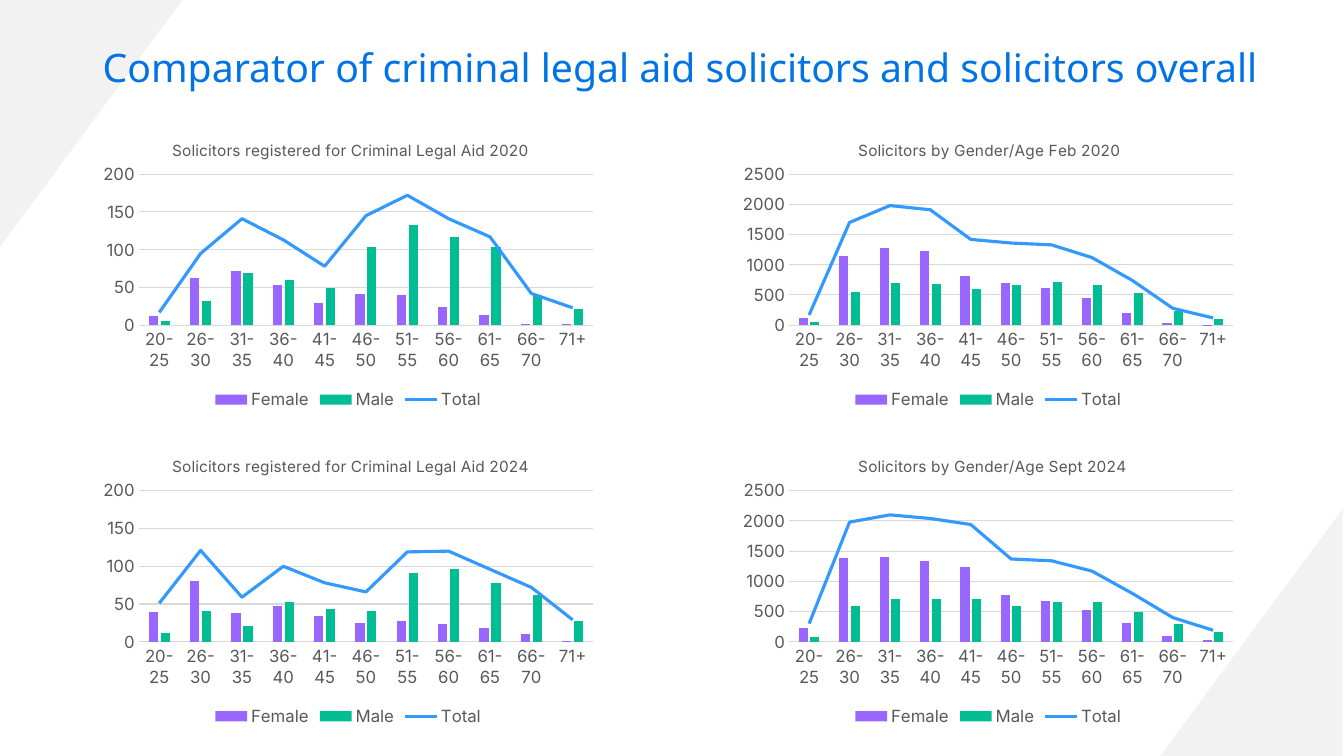
from pptx import Presentation, util as u
from pptx.chart import data as chart_data
from pptx.dml import color as dml
from pptx.enum import chart as ch, shapes, text
from pptx.oxml import ns, parse_xml

AGES = ["20-25", "26-30", "31-35", "36-40", "41-45", "46-50",
        "51-55", "56-60", "61-65", "66-70", "71+"]
FEMALE, MALE, TOTAL = "9966FF", "00BD94", "3399FF"
GREY, RULE, CORNER, BLUE = "595959", "D9D9D9", "F2F2F2", "0073E5"
COLUMNS, ROWS = (66.2, 523.4), (84.2, 310.3)
PANEL_WIDTH, PANEL_HEIGHT = 365, 211.7

LEGAL_AID = dict(top_value=200, step=50, title_x=0.15, plot_x=0.09, plot_w=0.89)
OVERALL = dict(top_value=2500, step=500, title_x=0.24, plot_x=0.11, plot_w=0.87)
PANELS = [
    (0, 0, "Solicitors registered for Criminal Legal Aid 2020", LEGAL_AID,
     [12, 63, 72, 53, 29, 41, 40, 24, 14, 2, 1],
     [5, 32, 69, 60, 49, 104, 132, 117, 103, 40, 22],
     [17, 95, 141, 113, 78, 145, 172, 141, 117, 42, 23]),
    (0, 1, "Solicitors registered for Criminal Legal Aid 2024", LEGAL_AID,
     [39, 80, 38, 47, 34, 25, 28, 23, 18, 10, 1],
     [12, 41, 21, 53, 44, 41, 91, 97, 78, 62, 28],
     [51, 121, 59, 100, 78, 66, 119, 120, 96, 72, 29]),
    (1, 0, "Solicitors by Gender/Age Feb 2020", OVERALL,
     [120, 1140, 1280, 1230, 810, 690, 610, 450, 210, 40, 10],
     [50, 550, 690, 680, 600, 670, 720, 670, 530, 240, 110],
     [170, 1700, 1980, 1910, 1420, 1360, 1330, 1120, 740, 280, 120]),
    (1, 1, "Solicitors by Gender/Age Sept 2024", OVERALL,
     [220, 1380, 1400, 1340, 1240, 780, 680, 520, 310, 90, 30],
     [80, 590, 700, 700, 700, 600, 650, 650, 500, 300, 160],
     [300, 1980, 2100, 2040, 1940, 1370, 1340, 1170, 800, 400, 190]),
]


def color(value):
    return dml.RGBColor.from_string(value)


def style_font(font, size, ink, name="Inter"):
    font.size, font.name, font.bold = u.Pt(size), name, False
    font.color.rgb = color(ink)


def write(frame, content, size, ink, name="Inter", align=None, spacing=None):
    frame.text = content
    paragraph = frame.paragraphs[0]
    paragraph.alignment = align
    paragraph.line_spacing = spacing
    style_font(paragraph.runs[0].font, size, ink, name)


def draw_line(line, ink, width):
    line.color.rgb = color(ink)
    line.width = u.Pt(width)


def add_corner(slide, left, top, turn):
    corner = slide.shapes.add_shape(shapes.MSO_SHAPE.RIGHT_TRIANGLE, u.Pt(left),
                                    u.Pt(top), u.Pt(176.4), u.Pt(130.3))
    corner.rotation = turn
    corner.shadow.inherit = False
    corner.fill.solid()
    corner.fill.fore_color.rgb = color(CORNER)
    corner.line.fill.background()
    slide.shapes._spTree.insert(2, corner._element)


def add_heading(slide, left, top, width, height):
    heading = slide.shapes.title
    heading.left, heading.top = u.Pt(left), u.Pt(top)
    heading.width, heading.height = u.Pt(width), u.Pt(height)
    frame = heading.text_frame
    frame.word_wrap = True
    frame.vertical_anchor = text.MSO_ANCHOR.MIDDLE
    write(frame, "Comparator of criminal legal aid solicitors and solicitors overall",
          28, BLUE, name="Noto Sans", align=text.PP_ALIGN.LEFT, spacing=0.9)


def set_layout(parent, index, target="", **place):
    for old in parent.findall(ns.qn("c:layout")):
        parent.remove(old)
    values = "".join(f'<c:{key} val="{value}"/>' for key, value in place.items())
    parent.insert(index, parse_xml(
        f'<c:layout {ns.nsdecls("c")}><c:manualLayout>{target}'
        f'<c:xMode val="edge"/><c:yMode val="edge"/>{values}'
        '</c:manualLayout></c:layout>'))


def move_total_to_line(chart):
    bars = chart.plots[0]._element
    total = bars.findall(ns.qn("c:ser"))[-1]
    for bar_only in total.findall(ns.qn("c:invertIfNegative")):
        total.remove(bar_only)
    axes = "".join(f'<c:axId val="{axis.get("val")}"/>'
                   for axis in bars.findall(ns.qn("c:axId")))
    line_plot = parse_xml(
        f'<c:lineChart {ns.nsdecls("c")}><c:grouping val="standard"/>'
        f'<c:varyColors val="0"/><c:marker val="1"/>{axes}</c:lineChart>')
    line_plot.insert(2, total)
    bars.addnext(line_plot)
    series = chart.plots[1].series[0]
    series.smooth = False
    series.marker.style = ch.XL_MARKER_STYLE.NONE
    draw_line(series.format.line, TOTAL, 2.25)


def add_panel(slide, left, top, width, height, title, female, male, total,
              top_value, step, title_x, plot_x, plot_w):
    counts_by_age = chart_data.CategoryChartData()
    counts_by_age.categories = AGES
    for name, values in (("Female", female), ("Male", male), ("Total", total)):
        counts_by_age.add_series(name, values)
    chart = slide.shapes.add_chart(ch.XL_CHART_TYPE.COLUMN_CLUSTERED, u.Pt(left), u.Pt(top),
                                   u.Pt(width), u.Pt(height), counts_by_age).chart
    style_font(chart.font, 10, "000000")

    write(chart.chart_title.text_frame, title, 11, GREY)
    set_layout(chart.chart_title._element, 1, x=title_x, y=0.06)

    bars = chart.plots[0]
    bars.gap_width, bars.overlap, bars.vary_by_categories = 219, -27, False
    for series, ink in zip(bars.series, (FEMALE, MALE)):
        series.format.fill.solid()
        series.format.fill.fore_color.rgb = color(ink)
        series.invert_if_negative = False
    move_total_to_line(chart)

    ages, counts = chart.category_axis, chart.value_axis
    for axis in (ages, counts):
        axis.major_tick_mark = axis.minor_tick_mark = ch.XL_TICK_MARK.NONE
        style_font(axis.tick_labels.font, 12, GREY)
    draw_line(ages.format.line, RULE, 0.75)
    counts.format.line.fill.background()
    counts.minimum_scale, counts.maximum_scale, counts.major_unit = 0, top_value, step
    draw_line(counts.major_gridlines.format.line, RULE, 0.75)

    chart.has_legend = True
    chart.legend.position = ch.XL_LEGEND_POSITION.BOTTOM
    chart.legend.include_in_layout = False
    style_font(chart.legend.font, 12, GREY)
    set_layout(chart._chartSpace.chart.plotArea, 0, '<c:layoutTarget val="inner"/>',
               x=plot_x, y=0.19, w=plot_w, h=0.51)


def main():
    deck = Presentation()
    deck.slide_width, deck.slide_height = u.Pt(960), u.Pt(540)
    slide = deck.slides.add_slide(deck.slide_layouts[5])
    add_corner(slide, 805.7, 386.6, 270)
    add_corner(slide, -23, 23, 90)
    add_heading(slide, 66.2, 28.8, 844.6, 41.8)
    for column, row, title, scale, female, male, total in PANELS:
        add_panel(slide, COLUMNS[column], ROWS[row], PANEL_WIDTH, PANEL_HEIGHT,
                  title, female, male, total, **scale)
    deck.save("out.pptx")


if __name__ == "__main__":
    main()
